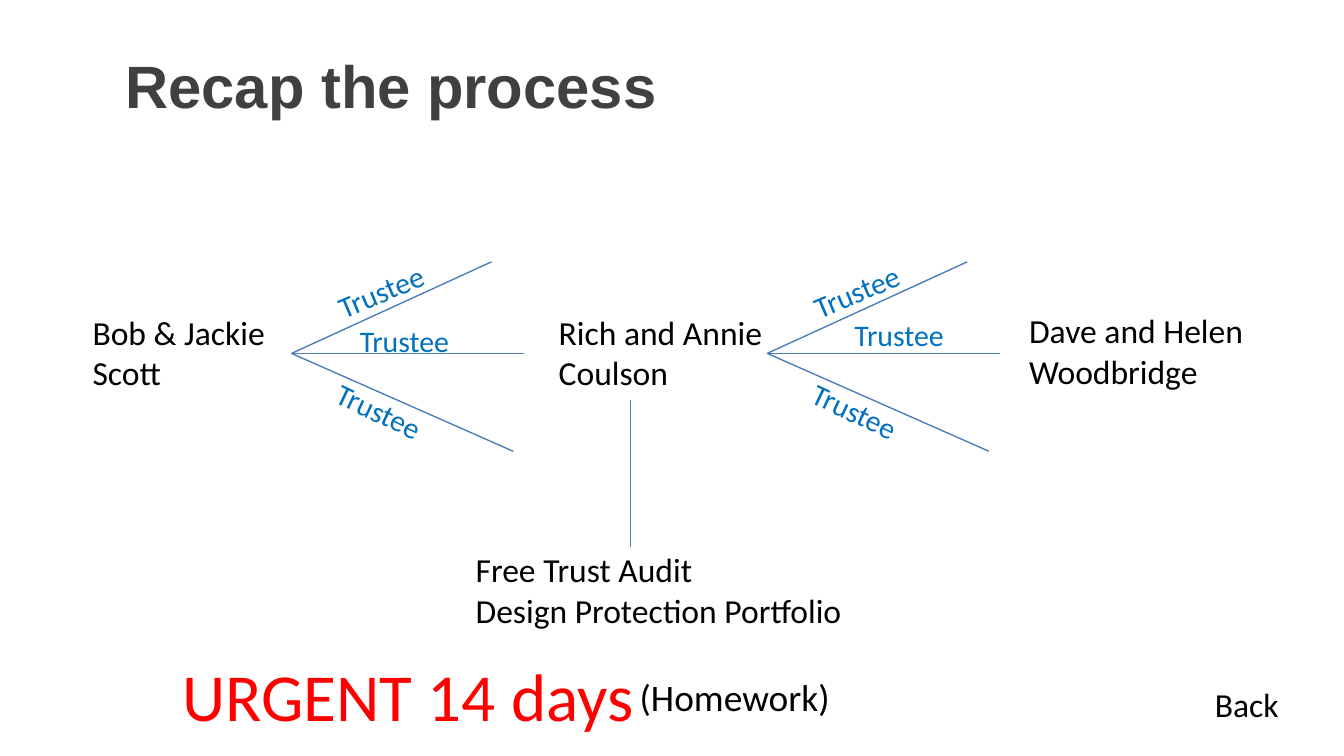
from dataclasses import dataclass

from lxml import etree
from pptx import Presentation
from pptx import util as u
from pptx.dml.color import RGBColor
from pptx.enum import shapes, text
from pptx.oxml.ns import qn


@dataclass(frozen=True)
class Theme:
    heading_font: str = "Arial"
    body_font: str = "Calibri"
    heading: str = "404040"
    body: str = "000000"
    accent: str = "0070C0"
    alert: str = "FF0000"
    line: str = "4B7EBC"
    heading_size: int = 32
    alert_size: int = 36
    note_size: int = 20
    body_size: int = 18
    label_size: int = 16
    line_width: float = 0.75


class SlideBuilder:
    def __init__(self, slide, theme):
        self.slide = slide
        self.theme = theme

    def text_box(self, left, top, width, height, lines, size=None, color=None):
        box = self.slide.shapes.add_textbox(*map(u.Cm, (left, top, width, height)))
        frame = box.text_frame
        frame.word_wrap = True
        frame.vertical_anchor = text.MSO_ANCHOR.TOP
        for index, line in enumerate(lines):
            paragraph = frame.paragraphs[0] if index == 0 else frame.add_paragraph()
            run = paragraph.add_run()
            run.text = line
            run.font.name = self.theme.body_font
            run.font.size = u.Pt(size or self.theme.body_size)
            run.font.color.rgb = RGBColor.from_string(color or self.theme.body)
        return box

    def heading(self, left, top, width, height, words):
        box = self.text_box(left, top, width, height, [words],
                            self.theme.heading_size, self.theme.heading)
        box.text_frame.margin_left = u.Cm(1.07)
        box.text_frame.margin_top = u.Cm(0.27)
        font = box.text_frame.paragraphs[0].runs[0].font
        font.name = self.theme.heading_font
        font.bold = True

    def label(self, left, top, words, rotation=0):
        box = self.text_box(left, top, 3.81, 0.94, [words],
                            self.theme.label_size, self.theme.accent)
        box.rotation = rotation

    def line(self, x1, y1, x2, y2):
        connector = self.slide.shapes.add_connector(
            shapes.MSO_CONNECTOR.STRAIGHT, *map(u.Cm, (x1, y1, x2, y2)))
        connector.line.color.rgb = RGBColor.from_string(self.theme.line)
        connector.line.width = u.Pt(self.theme.line_width)
        properties = connector.element.find(qn("p:spPr"))
        etree.SubElement(properties, qn("a:effectLst"))

    def trustee_fan(self, x, y, middle_label):
        """Three lines from one point, each with a label."""
        for dx, dy in ((4.39, 0), (3.78, -1.73), (4.19, 1.85)):
            self.line(x, y, x + dx, y + dy)
        labels = ((*middle_label, 0), (0.53, -1.96, 337.2), (0.48, 0.97, 25.4))
        for dx, dy, rotation in labels:
            self.label(x + dx, y + dy, "Trustee", rotation)


def main():
    theme = Theme()
    presentation = Presentation()
    presentation.slide_width = u.Cm(25.4)
    presentation.slide_height = u.Cm(14.29)
    slide = presentation.slides.add_slide(presentation.slide_layouts[6])
    builder = SlideBuilder(slide, theme)

    builder.heading(1.3, 0.66, 13.79, 0.64, "Recap the process")

    # Clients in the referral chain
    clients = (
        (1.5, 5.77, ["Bob & Jackie", "Scott"]),
        (10.31, 5.77, ["Rich and Annie", "Coulson"]),
        (19.2, 5.74, ["Dave and Helen", "Woodbridge"]),
    )
    for left, top, names in clients:
        builder.text_box(left, top, 6.2, 1.8, names)

    # Trustees between clients
    builder.trustee_fan(5.51, 6.68, (1.04, -0.71))
    builder.trustee_fan(14.5, 6.68, (1.4, -0.81))

    # Services offered
    builder.line(11.91, 7.57, 11.91, 10.34)
    builder.text_box(8.74, 10.26, 7.49, 1.8,
                     ["Free Trust Audit", "Design Protection Portfolio"])

    # Deadline and navigation
    builder.text_box(3.2, 12.24, 10.11, 1.8, ["URGENT 14 days"],
                     theme.alert_size, theme.alert)
    builder.text_box(11.84, 12.62, 10.11, 1.12, ["(Homework)"], theme.note_size)
    builder.text_box(22.71, 12.8, 2.59, 1.02, ["Back"])

    presentation.save("out.pptx")


if __name__ == "__main__":
    main()
